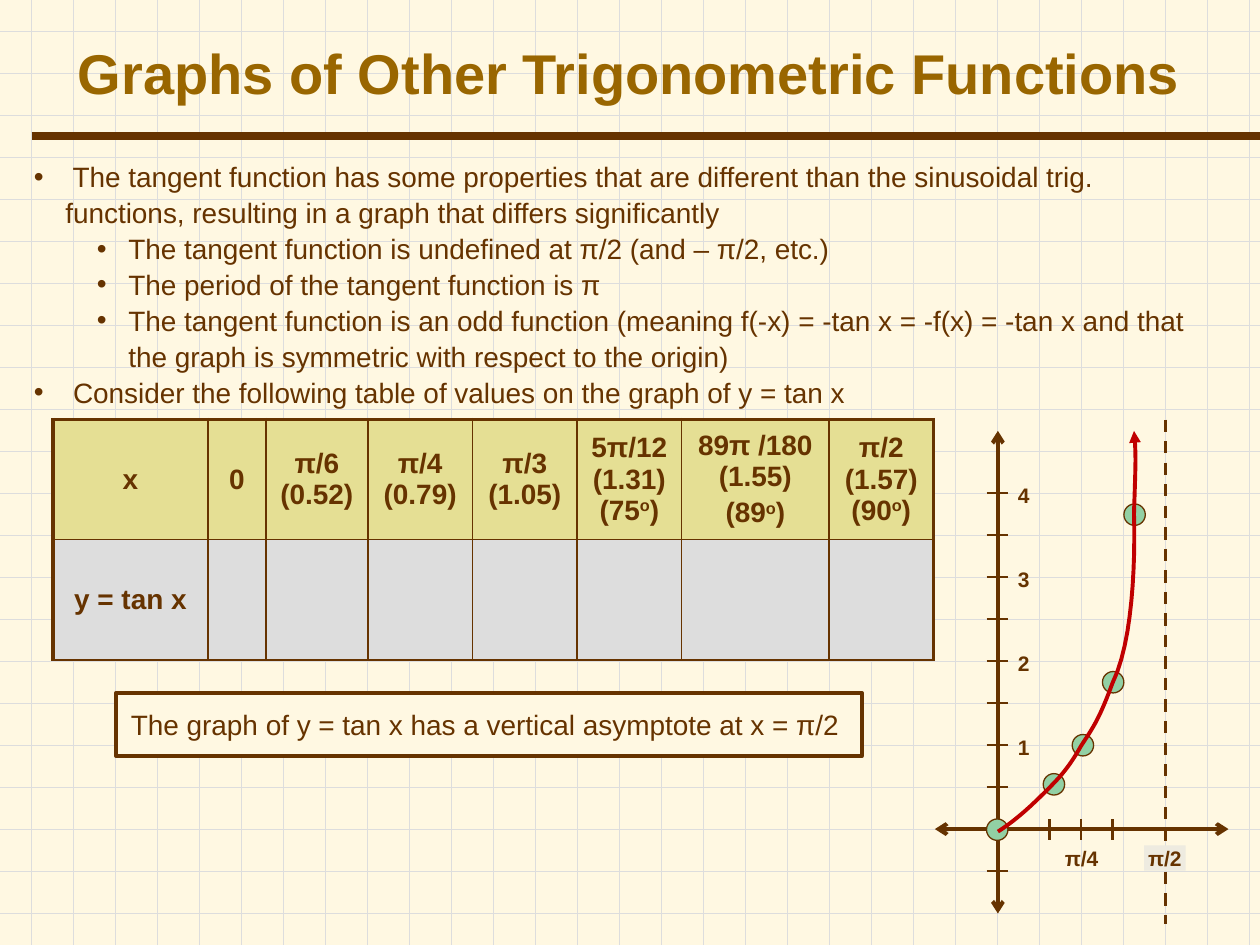
from dataclasses import dataclass
from typing import Any

from lxml import etree
from pptx import Presentation
from pptx import util as u
from pptx.dml.color import RGBColor
from pptx.enum import dml, shapes, text
from pptx.oxml.ns import qn

COLORS = {
    "paper": "FFF8E2", "grid": "DDDDDD", "brown": "663300", "gold": "996600",
    "header": "E5DF94", "dot": "92D0A4", "curve": "C00000", "label": "EEEBE0",
}
BODY = {"size": u.Pt(16), "name": "Arial", "bold": False}
STRONG = {**BODY, "bold": True}
TICK = {**STRONG, "size": u.Pt(12)}
TITLE = {**STRONG, "size": u.Pt(32)}
MIDDLE = text.MSO_ANCHOR.MIDDLE
CENTER = text.PP_ALIGN.CENTER


def rgb(name):
    return RGBColor.from_string(COLORS[name])


def inches(*values):
    return [u.Inches(value) for value in values]


@dataclass
class Board:
    slide: Any
    ink: str = "brown"

    def stroke(self, line, color, width, head=None, tail=None, dash=None):
        line.color.rgb = rgb(color)
        line.width = u.Pt(width)
        if dash:
            line.dash_style = dash
        for tag, kind in (("a:headEnd", head), ("a:tailEnd", tail)):
            if kind:
                etree.SubElement(line._get_or_add_ln(), qn(tag), type=kind)

    def line(self, x1, y1, x2, y2, width, color=None, **ends):
        rule = self.slide.shapes.add_connector(
            shapes.MSO_CONNECTOR.STRAIGHT, *inches(x1, y1, x2, y2))
        self.stroke(rule.line, color or self.ink, width, **ends)
        etree.SubElement(rule._element.spPr, qn("a:effectLst"))

    def shape(self, kind, box, fill, width=0):
        figure = self.slide.shapes.add_shape(kind, *inches(*box))
        figure.shadow.inherit = False
        figure.fill.solid()
        figure.fill.fore_color.rgb = rgb(fill)
        if width:
            self.stroke(figure.line, self.ink, width)
        else:
            figure.line.fill.background()
        return figure

    def textbox(self, box):
        return self.slide.shapes.add_textbox(*inches(*box))

    def frame(self, holder, side=0, edge=0, anchor=text.MSO_ANCHOR.TOP):
        frame = holder.text_frame
        settings = {
            "word_wrap": True, "vertical_anchor": anchor,
            "margin_left": u.Inches(side), "margin_right": u.Inches(side),
            "margin_top": u.Inches(edge), "margin_bottom": u.Inches(edge),
        }
        for key, value in settings.items():
            setattr(frame, key, value)
        return frame

    def run(self, paragraph, words, style, color=None, raised=False):
        run = paragraph.add_run()
        run.text = words
        for key, value in style.items():
            setattr(run.font, key, value)
        run.font.color.rgb = rgb(color or self.ink)
        if raised:
            run.font._element.set("baseline", "30000")

    def caption(self, frame, words, style, color=None):
        paragraph = frame.paragraphs[0]
        paragraph.alignment = CENTER
        self.run(paragraph, words, style, color)

    def bullets(self, box, items):
        frame = self.frame(self.textbox(box), side=0.1)
        for index, (level, words) in enumerate(items):
            paragraph = frame.add_paragraph() if index else frame.paragraphs[0]
            paragraph.level = level
            paragraph.line_spacing = 1.07
            props = paragraph._p.get_or_add_pPr()
            for key, value in {"marL": 0.25 + level / 2, "marR": 0.1, "indent": -0.25}.items():
                props.set(key, str(u.Inches(value)))
            etree.SubElement(props, qn("a:buFont"), typeface="Arial")
            etree.SubElement(props, qn("a:buChar"), char="•")
            self.run(paragraph, words, BODY)

    def border(self, cell, widths):
        props = cell._tc.get_or_add_tcPr()
        for index, (side, width) in enumerate(widths.items()):
            edge = etree.Element(qn(f"a:{side}"), w=str(u.Pt(width)))
            fill = etree.SubElement(edge, qn("a:solidFill"))
            etree.SubElement(fill, qn("a:srgbClr"), val=COLORS[self.ink])
            props.insert(index, edge)

    def table(self, box, widths, heights, rows, fills):
        grid = self.slide.shapes.add_table(len(rows), len(widths), *inches(*box)).table
        for flag in ("first_row", "horz_banding"):
            setattr(grid, flag, False)
        for column, width in zip(grid.columns, widths):
            column.width = u.Inches(width)
        for r, entries in enumerate(rows):
            grid.rows[r].height = u.Inches(heights[r])
            for c, paragraphs in enumerate(entries):
                cell = grid.cell(r, c)
                cell.vertical_anchor = MIDDLE
                cell.fill.solid()
                cell.fill.fore_color.rgb = rgb(fills[r])
                self.border(cell, {
                    "lnL": 1 if c else 2.25,
                    "lnR": 2.25 if c == len(widths) - 1 else 1,
                    "lnT": 1 if r else 2.25,
                    "lnB": 1,
                })
                for index, words in enumerate(paragraphs):
                    frame = cell.text_frame
                    paragraph = frame.add_paragraph() if index else frame.paragraphs[0]
                    paragraph.alignment = CENTER
                    paragraph.space_before = u.Pt(3.2 if index else 0)
                    for part, piece in enumerate(words.split("^")):
                        self.run(paragraph, piece, STRONG, raised=part == 1)

    def curve(self, start, segments, steps=12):
        points, origin = [], start
        for knots in segments:
            for step in range(1, steps + 1):
                t = step / steps
                weights = ((1 - t) ** 3, 3 * t * (1 - t) ** 2, 3 * t * t * (1 - t), t ** 3)
                points.append([u.Inches(sum(w * k[axis] for w, k in zip(weights, (origin, *knots))))
                               for axis in (0, 1)])
            origin = knots[-1]
        builder = self.slide.shapes.build_freeform(*inches(*start))
        builder.add_line_segments(points, close=False)
        tangent = builder.convert_to_shape()
        tangent.shadow.inherit = False
        tangent.fill.background()
        self.stroke(tangent.line, "curve", 2.25, tail="triangle")


def main():
    deck = Presentation()
    deck.slide_width, deck.slide_height = inches(10, 7.5)
    slide = deck.slides.add_slide(deck.slide_layouts[6])
    slide.background.fill.solid()
    slide.background.fill.fore_color.rgb = rgb("paper")
    board = Board(slide)

    for i in range(22):
        board.line(0, 0.25 + i / 3, 10, 0.25 + i / 3, 1, "grid")
    for i in range(30):
        board.line(0.25 + i / 3, 0, 0.25 + i / 3, 7.5, 1, "grid")
    board.line(0.25, 1.08, 10, 1.08, 4.5)

    title = board.frame(board.textbox((0.16, 0.14, 9.67, 0.86)), 0.1, 0.05, MIDDLE)
    board.caption(title, "Graphs of Other Trigonometric Functions", TITLE, "gold")
    board.bullets((0.17, 1.25, 9.67, 1.89), [
        (0, " The tangent function has some properties that are different than the sinusoidal trig. "
            "functions, resulting in a graph that differs significantly"),
        (1, "The tangent function is undefined at π/2 (and – π/2, etc.)"),
        (1, "The period of the tangent function is π"),
        (1, "The tangent function is an odd function (meaning f(-x) = -tan x = -f(x) = -tan x "
            "and that the graph is symmetric with respect to the origin)"),
        (0, " Consider the following table of values on the graph of y = tan x"),
    ])

    angles = [["x"], ["0"], ["π/6 (0.52)"], ["π/4 (0.79)"], ["π/3 (1.05)"],
              ["5π/12 (1.31)(75^o^)"], ["89π /180 (1.55)", "(89^o^)"], ["π/2 (1.57) (90^o^)"]]
    board.table((0.42, 3.33, 7, 1.91), [1.23, 0.46, 0.81, 0.83, 0.83, 0.83, 1.17, 0.83],
                [0.95, 0.96], [angles, [["y = tan x"]] + [[]] * 7], ["header", "grid"])

    asymptote = board.shape(shapes.MSO_SHAPE.RECTANGLE, (0.92, 5.5, 5.92, 0.5), "paper", 2.25)
    board.caption(board.frame(asymptote, 0.1, anchor=MIDDLE),
                  "The graph of y = tan x has a vertical asymptote at x = π/2 ", BODY)

    origin_x, origin_y = 7.92, 6.58
    board.line(7.42, origin_y, 9.75, origin_y, 2.25, head="arrow", tail="arrow")
    board.line(origin_x, 3.42, origin_x, 7.25, 2.25, head="arrow", tail="arrow")
    for x in (8.33, 8.58, 8.83):
        board.line(x, 6.5, x, 6.67, 1.5)
    for half in range(-1, 9):
        y = origin_y - half / 3
        board.line(7.83, y, 8, y, 1.5)
    for value in range(1, 5):
        label = board.textbox((8, origin_y - 0.08 - value * 2 / 3, 0.25, 0.2))
        board.caption(board.frame(label), str(value), TICK)
    board.caption(board.frame(board.textbox((8.42, 6.71, 0.33, 0.2))), "π/4", TICK)

    for x, y in ((7.83, 6.5), (8.28, 6.14), (8.51, 5.83), (8.75, 5.33), (8.92, 4)):
        board.shape(shapes.MSO_SHAPE.OVAL, (x, y, 0.17, 0.17), "dot", 0.75)
    board.curve((7.92, 6.6), [
        ((8.08, 6.5), (8.22, 6.36), (8.33, 6.25)),
        ((8.44, 6.14), (8.5, 6.06), (8.58, 5.92)),
        ((8.67, 5.78), (8.72, 5.72), (8.83, 5.42)),
        ((8.99, 5.09), (9.01, 4.47), (9, 4.08)),
        ((9.01, 3.72), (9.02, 3.62), (9, 3.42)),
    ])
    board.line(9.25, 3.33, 9.25, 7.33, 1.75, dash=dml.MSO_LINE.DASH)
    half_pi = board.shape(shapes.MSO_SHAPE.RECTANGLE, (9.08, 6.71, 0.33, 0.2), "label")
    board.caption(board.frame(half_pi), "π/2", TICK)

    deck.save("out.pptx")


if __name__ == "__main__":
    main()
